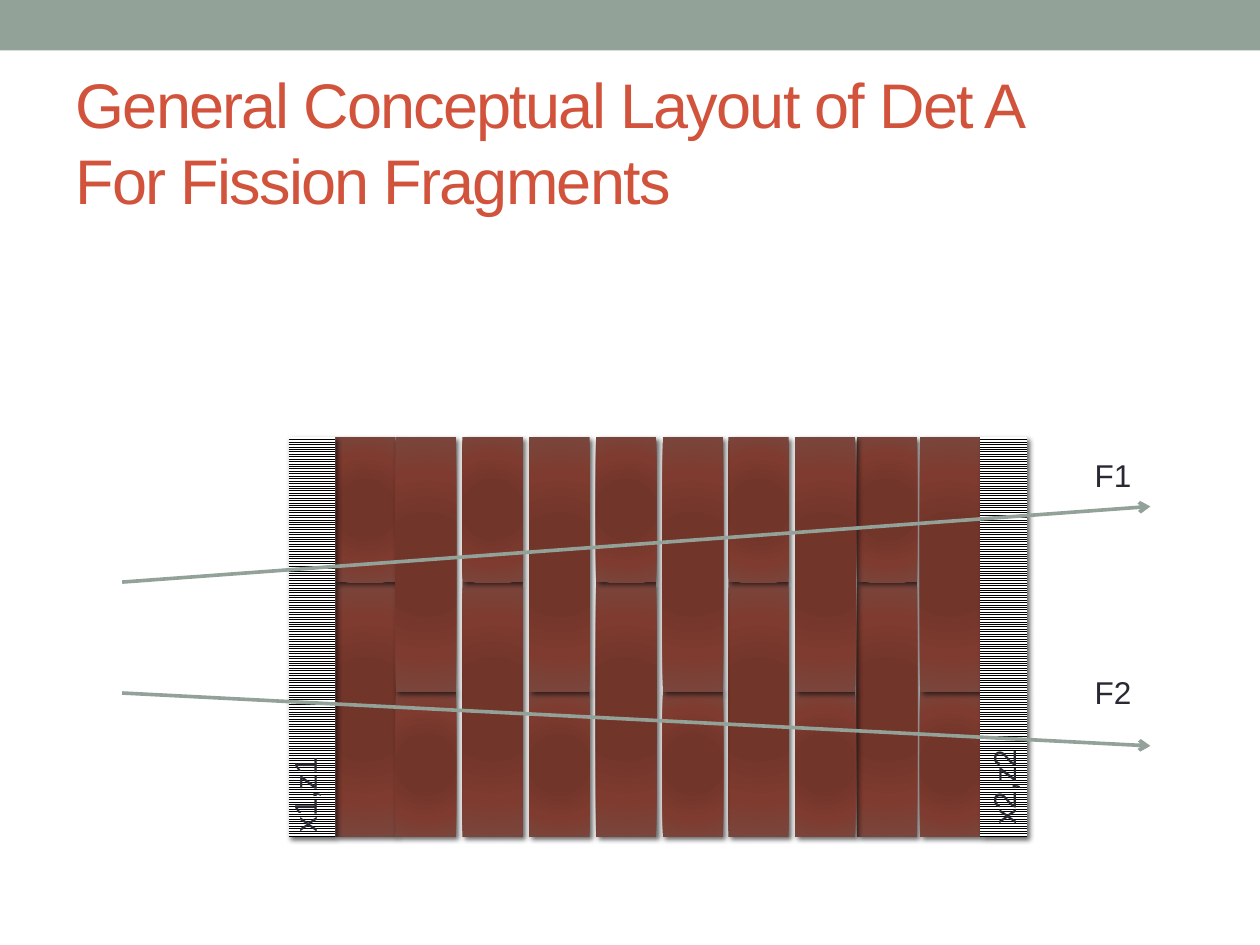
from lxml import etree
from pptx import Presentation
from pptx.dml.color import RGBColor
from pptx.enum.dml import MSO_PATTERN
from pptx.enum.shapes import MSO_CONNECTOR, MSO_SHAPE
from pptx.enum.text import MSO_ANCHOR, MSO_AUTO_SIZE, PP_ALIGN
from pptx.oxml import parse_xml
from pptx.oxml.ns import nsdecls, qn
from pptx.util import Inches, Pt

SAGE = RGBColor(0x93, 0xA2, 0x99)
RUST = RGBColor(0xD2, 0x53, 0x3C)
INK = RGBColor(0x29, 0x29, 0x34)
BLACK = RGBColor(0, 0, 0)
WHITE = RGBColor(0xFF, 0xFF, 0xFF)
PAD_STOPS = [
    (0, RGBColor(0x74, 0x33, 0x27)),
    (34, RGBColor(0x72, 0x35, 0x2A)),
    (70, RGBColor(0x7F, 0x3B, 0x2F)),
    (100, RGBColor(0x79, 0x46, 0x3D)),
]
FONT = "Arial"

STACK_TOP, STACK_HEIGHT = 3.47, 3.17
SHORT_PAD, LONG_PAD = 1.15, 2.02
PAD_WIDTH, STRIP_WIDTH = 0.48, 0.37
SHORT_TOP_COLUMNS = [2.66, 3.67, 4.73, 5.78, 6.8]
LONG_TOP_COLUMNS = [3.14, 4.2, 5.26, 6.31, 7.3]
STRIPS = [2.29, 7.78]
TRACKS = [((0.97, 4.62), (9.13, 4.02)), ((0.97, 5.5), (9.13, 5.92))]
LABELS = [
    ("x1,z1", 2.01, 6.1, 0.81, 270),
    ("x2,z2", 7.56, 6.04, 0.81, 270),
    ("F1", 8.59, 3.57, 0.5, 0),
    ("F2", 8.59, 5.29, 0.5, 0),
]


def style_run(run, size, color):
    run.font.name = FONT
    run.font.size = Pt(size)
    run.font.color.rgb = color


def add_box(slide, left, top, width, height):
    box = slide.shapes.add_shape(
        MSO_SHAPE.RECTANGLE, Inches(left), Inches(top), Inches(width), Inches(height))
    box.line.fill.background()
    box.shadow.inherit = False
    return box


def add_shadow(box):
    effects = box._element.spPr.find(qn("a:effectLst"))
    effects.append(parse_xml(
        f'<a:outerShdw {nsdecls("a")} blurRad="{Pt(3)}" dist="{Pt(2)}" dir="2700000" '
        'algn="tl" rotWithShape="0"><a:srgbClr val="000000"><a:alpha val="60000"/>'
        '</a:srgbClr></a:outerShdw>'))


def add_pad(slide, left, top, height):
    pad = add_box(slide, left, top, PAD_WIDTH, height)
    pad.fill.gradient()
    stops = "".join(
        f'<a:gs pos="{percent * 1000}"><a:srgbClr val="{color}"/></a:gs>'
        for percent, color in PAD_STOPS)
    properties = pad._element.spPr
    properties.replace(properties.find(qn("a:gradFill")), parse_xml(
        f'<a:gradFill {nsdecls("a")} rotWithShape="1"><a:gsLst>{stops}</a:gsLst>'
        '<a:path path="circle"><a:fillToRect l="100000" t="100000" r="100000" '
        'b="100000"/></a:path></a:gradFill>'))
    add_shadow(pad)


def add_column(slide, left, upper, lower):
    add_pad(slide, left, STACK_TOP + upper, lower)
    add_pad(slide, left, STACK_TOP, upper)


def add_strip(slide, left):
    strip = add_box(slide, left, STACK_TOP, STRIP_WIDTH, STACK_HEIGHT)
    strip.fill.patterned()
    strip.fill.pattern = MSO_PATTERN.LIGHT_HORIZONTAL
    strip.fill.fore_color.rgb = BLACK
    strip.fill.back_color.rgb = WHITE
    add_shadow(strip)


def add_track(slide, start, end):
    track = slide.shapes.add_connector(
        MSO_CONNECTOR.STRAIGHT, *map(Inches, start + end))
    track.line.color.rgb = SAGE
    track.line.width = Pt(2.08)
    etree.SubElement(track.line._get_or_add_ln(), qn("a:tailEnd"), type="arrow")
    etree.SubElement(track._element.spPr, qn("a:effectLst"))


def add_label(slide, text, left, top, width, rotation):
    label = slide.shapes.add_textbox(
        Inches(left), Inches(top), Inches(width), Inches(0.4))
    label.rotation = rotation
    frame = label.text_frame
    frame.text = text
    frame.word_wrap = False
    frame.auto_size = MSO_AUTO_SIZE.SHAPE_TO_FIT_TEXT
    style_run(frame.paragraphs[0].runs[0], 18, INK)


def set_title(slide, text):
    title = slide.shapes.title
    title.left, title.top = Inches(0.5), Inches(0.58)
    title.width, title.height = Inches(9), Inches(1.08)
    frame = title.text_frame
    frame.text = text
    frame.auto_size = MSO_AUTO_SIZE.NONE
    frame.vertical_anchor = MSO_ANCHOR.MIDDLE
    paragraph = frame.paragraphs[0]
    paragraph.alignment = PP_ALIGN.LEFT
    for run in paragraph.runs:
        style_run(run, 36, RUST)
        run.font._element.set("spc", "-100")


def main():
    deck = Presentation()
    deck.slide_width, deck.slide_height = Inches(10), Inches(7.5)
    slide = deck.slides.add_slide(deck.slide_layouts[5])
    banner = add_box(slide, 0, 0, 10, 0.4)
    banner.fill.solid()
    banner.fill.fore_color.rgb = SAGE
    set_title(slide, "General Conceptual Layout of Det A\vFor Fission Fragments")
    for left in SHORT_TOP_COLUMNS:
        add_column(slide, left, SHORT_PAD, LONG_PAD)
    for left in LONG_TOP_COLUMNS:
        add_column(slide, left, LONG_PAD, SHORT_PAD)
    for left in STRIPS:
        add_strip(slide, left)
    for start, end in TRACKS:
        add_track(slide, start, end)
    for label in LABELS:
        add_label(slide, *label)
    deck.save("out.pptx")


if __name__ == "__main__":
    main()
